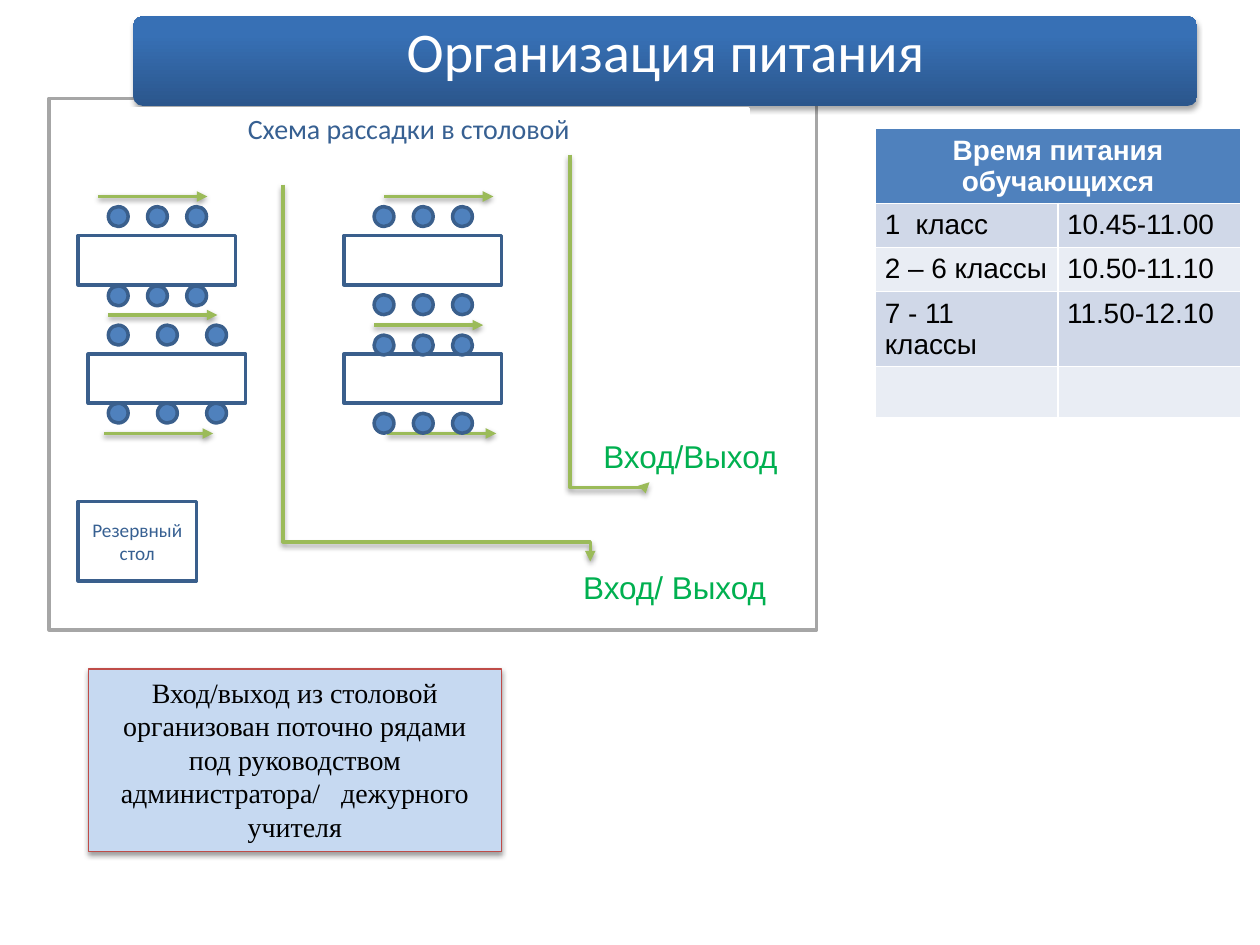
import pptx
import pptx.util
import pptx.dml.color
import pptx.enum.shapes
import pptx.enum.text
import pptx.oxml

Pt = pptx.util.Pt
SHAPE = pptx.enum.shapes.MSO_SHAPE
CONNECTOR = pptx.enum.shapes.MSO_CONNECTOR
ALIGN = pptx.enum.text.PP_ALIGN
ANCHOR = pptx.enum.text.MSO_ANCHOR
NS = 'xmlns:a="http://schemas.openxmlformats.org/drawingml/2006/main"'

COLORS = {
    "white": "FFFFFF", "black": "000000", "frame": "A6A6A6",
    "outline": "3A5F8C", "label": "376092", "chair": "4F81BD",
    "route": "9BBB59", "door": "00B050", "note": "C6D9F1",
    "note_line": "BF4C48", "head": "4F81BD", "band": "D0D8E8",
    "plain": "E9EDF4", "dark": "2B568C", "mid": "3770B5", "light": "3570B8",
}
SCHEDULE = [
    ("1  класс", "10.45-11.00"),
    ("2 – 6 классы", "10.50-11.10"),
    ("7 - 11 классы", "11.50-12.10"),
    ("", ""),
]
TABLES = [(44.64, 134.64), (50.4, 202.32), (196.56, 202.32), (196.56, 134.64)]
CHAIR_ROWS = [  # left, pitch, top
    (61.9, 22.4, 118.1), (61.9, 22.4, 163.4),
    (61.9, 28.1, 185.8), (61.9, 28.1, 230.4),
    (213.8, 22.4, 118.1), (213.8, 22.4, 168.5),
    (213.8, 22.4, 191.5), (213.8, 22.4, 236.2),
]
ARROWS = [(56.2, 112.3), (61.9, 180), (59.5, 247.7),
          (219.6, 112.3), (213.8, 185.8), (221.3, 247.7)]
ROUTES = [  # left, top, width, height before the turn, bend
    (141.84, 125.28, 215.28, 175.68, 94800),
    (254.88, 159.3, 187.2, 45.36, 101600),
]


def rgb(name):
    return pptx.dml.color.RGBColor.from_string(COLORS[name])


def set_effects(shape, shadow=False, dist=1.6, alpha=38):
    """Give the shape a soft shadow below, or none at all."""
    sp_pr = shape._element.spPr
    body = ""
    if shadow:
        body = (f'<a:outerShdw blurRad="{Pt(3.1)}" dist="{Pt(dist)}" dir="5400000" '
                f'rotWithShape="0"><a:srgbClr val="{COLORS["black"]}">'
                f'<a:alpha val="{alpha * 1000}"/></a:srgbClr></a:outerShdw>')
    sp_pr.append(pptx.oxml.parse_xml(f"<a:effectLst {NS}>{body}</a:effectLst>"))


def write(tf, text, size, color, font, align=ALIGN.LEFT, anchor=ANCHOR.TOP):
    tf.word_wrap = True
    tf.vertical_anchor = anchor
    p = tf.paragraphs[0]
    p.text = text
    p.alignment = align
    for r in p.runs:
        r.font.size = Pt(size)
        r.font.name = font
        r.font.color.rgb = rgb(color)
    return p


def add_box(shapes, kind, x, y, w, h, fill, line, weight=2, shadow=False):
    sp = shapes.add_shape(kind, Pt(x), Pt(y), Pt(w), Pt(h))
    sp.fill.solid()
    sp.fill.fore_color.rgb = rgb(fill)
    sp.line.color.rgb = rgb(line)
    sp.line.width = Pt(weight)
    set_effects(sp, shadow)
    return sp


def add_text(shapes, x, y, w, h, *args, **kwargs):
    tf = shapes.add_textbox(Pt(x), Pt(y), Pt(w), Pt(h)).text_frame
    return tf, write(tf, *args, **kwargs)


def add_route(s, kind, x1, y1, x2, y2):
    c = s.shapes.add_connector(kind, Pt(x1), Pt(y1), Pt(x2), Pt(y2))
    c.line.color.rgb = rgb("route")
    c.line.width = Pt(2)
    c.line._get_or_add_ln().append(
        pptx.oxml.parse_xml(f'<a:tailEnd {NS} type="triangle"/>'))
    set_effects(c, shadow=True)
    return c


def add_bent_route(s, x, y, w, h, bend):
    """Elbow connector turned a quarter so that it leaves downwards."""
    c = add_route(s, CONNECTOR.ELBOW, x + w, y, x, y + h)
    sp_pr = c._element.spPr
    sp_pr.xfrm.set("rot", "16200000")
    geom = sp_pr.prstGeom
    for old in list(geom):
        geom.remove(old)
    geom.append(pptx.oxml.parse_xml(
        f'<a:avLst {NS}><a:gd name="adj1" fmla="val {bend}"/></a:avLst>'))


def add_title(s):
    group = s.shapes.add_group_shape()
    banner = group.shapes.add_shape(
        SHAPE.ROUNDED_RECTANGLE, Pt(76.32), Pt(9.36), Pt(607.68), Pt(51.12))
    banner.adjustments[0] = 0.1
    banner.line.fill.background()
    stops = "".join(
        f'<a:gs pos="{pos * 1000}"><a:srgbClr val="{COLORS[name]}"/></a:gs>'
        for pos, name in ((0, "dark"), (80, "mid"), (100, "light")))
    banner._element.spPr.prstGeom.addnext(pptx.oxml.parse_xml(
        f'<a:gradFill {NS} rotWithShape="1"><a:gsLst>{stops}</a:gsLst>'
        '<a:lin ang="16200000" scaled="0"/></a:gradFill>'))
    set_effects(banner, shadow=True, dist=1.8, alpha=35)
    tf, p = add_text(group.shapes, 79.92, 10.8, 601.2, 41.04, "Организация питания",
                     32, "white", "Calibri", ALIGN.CENTER, ANCHOR.MIDDLE)
    tf.margin_left = tf.margin_right = Pt(5.76)
    tf.margin_top = tf.margin_bottom = Pt(4.32)
    p.line_spacing = 0.9


def fill_cell(cell, text, fill, color, align=ALIGN.LEFT, bold=False):
    cell.fill.solid()
    cell.fill.fore_color.rgb = rgb(fill)
    cell.margin_left = cell.margin_right = Pt(5.2)
    cell.margin_top = cell.margin_bottom = Pt(3.6)
    if text:
        p = write(cell.text_frame, text, 16, color, "Arial", align)
        p.runs[0].font.bold = bold


def add_schedule(s):
    rows = len(SCHEDULE) + 1
    table = s.shapes.add_table(
        rows, 2, Pt(500.4), Pt(73.44), Pt(208.4), Pt(25.2 * rows)).table
    table.cell(0, 0).merge(table.cell(0, 1))
    fill_cell(table.cell(0, 0), "Время питания обучающихся", "head", "white",
              ALIGN.CENTER, bold=True)
    for i, values in enumerate(SCHEDULE, 1):
        for j, text in enumerate(values):
            fill_cell(table.cell(i, j), text, "band" if i % 2 else "plain", "black")


def add_seating(s):
    for x, y in ARROWS:
        add_route(s, CONNECTOR.STRAIGHT, x, y, x + 62.3, y)
    for route in ROUTES:
        add_bent_route(s, *route)
    add_text(s.shapes, 337.68, 246.24, 123.84, 28.8, "Вход/Выход", 18, "door", "Arial")
    add_text(s.shapes, 326.16, 321.12, 135.36, 28.8, "Вход/ Выход", 18, "door", "Arial")
    for x, y in TABLES:
        add_box(s.shapes, SHAPE.RECTANGLE, x, y, 90, 28.08, "white", "outline")
    spare = add_box(s.shapes, SHAPE.RECTANGLE, 44.64, 286.56, 67.68, 45.36,
                    "white", "outline")
    write(spare.text_frame, "Резервный стол", 11, "label", "Calibri",
          ALIGN.CENTER, ANCHOR.MIDDLE)
    caption = add_box(s.shapes, SHAPE.RECTANGLE, 39.6, 61.92, 388.08, 22.32,
                      "white", "white")
    write(caption.text_frame, "Схема рассадки в столовой", 16, "label", "Calibri",
          ALIGN.CENTER, ANCHOR.MIDDLE)
    for left, pitch, top in CHAIR_ROWS:
        for i in range(3):
            add_box(s.shapes, SHAPE.FLOWCHART_CONNECTOR, left + i * pitch, top,
                    11.3, 11.3, "chair", "outline")


def main():
    prs = pptx.Presentation()
    prs.slide_width, prs.slide_height = Pt(720), Pt(540)
    s = prs.slides.add_slide(prs.slide_layouts[6])
    add_box(s.shapes, SHAPE.RECTANGLE, 28.08, 56.16, 438.48, 303.84, "white", "frame")
    add_schedule(s)
    add_title(s)
    add_seating(s)
    note = add_box(s.shapes, SHAPE.RECTANGLE, 50.4, 382.32, 236.16, 104.4,
                   "note", "note_line", 0.75, shadow=True)
    write(note.text_frame, "Вход/выход из столовой организован поточно рядами "
          "под руководством администратора/   дежурного учителя",
          16, "black", "Times New Roman", ALIGN.CENTER)
    prs.save("out.pptx")


if __name__ == "__main__":
    main()
